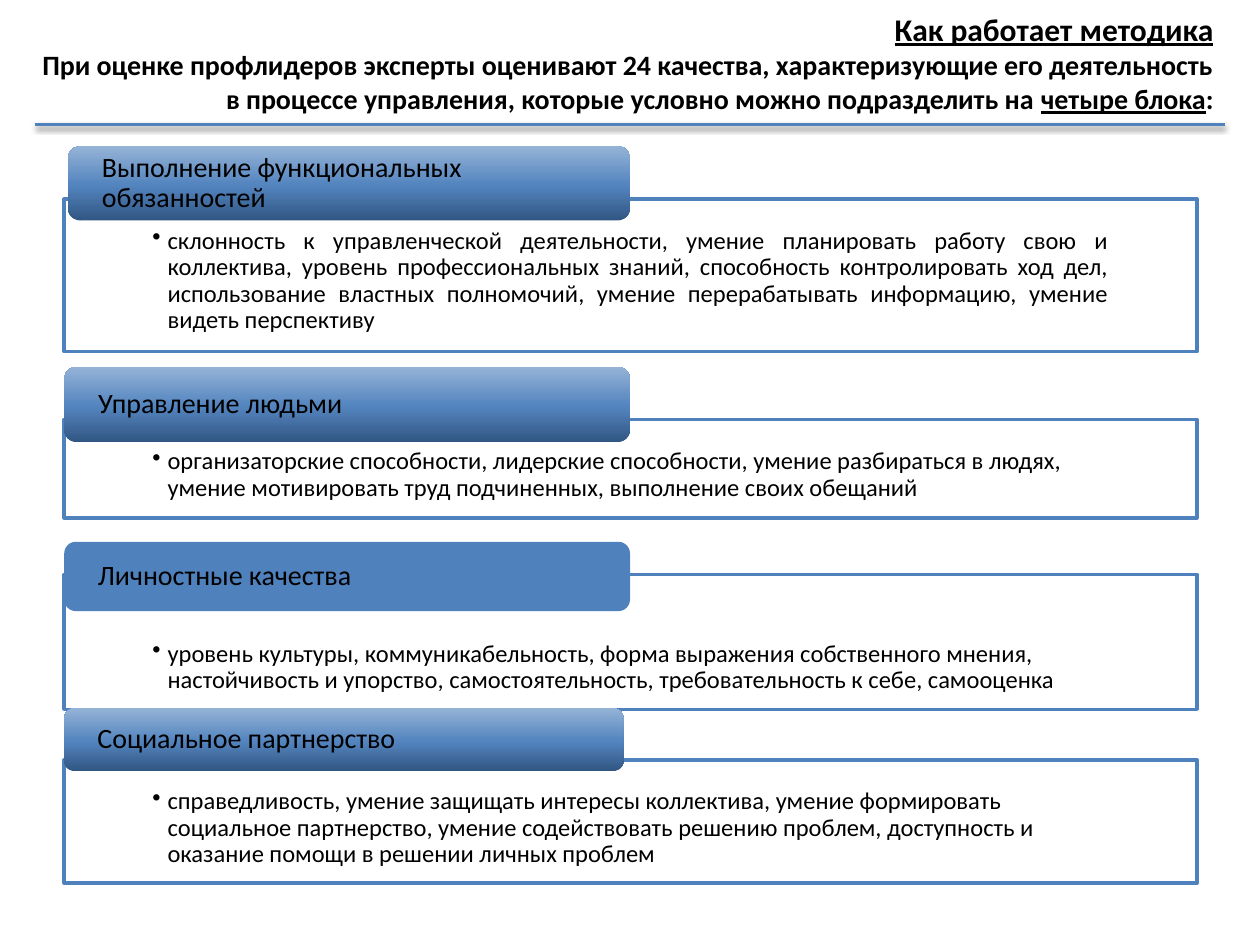
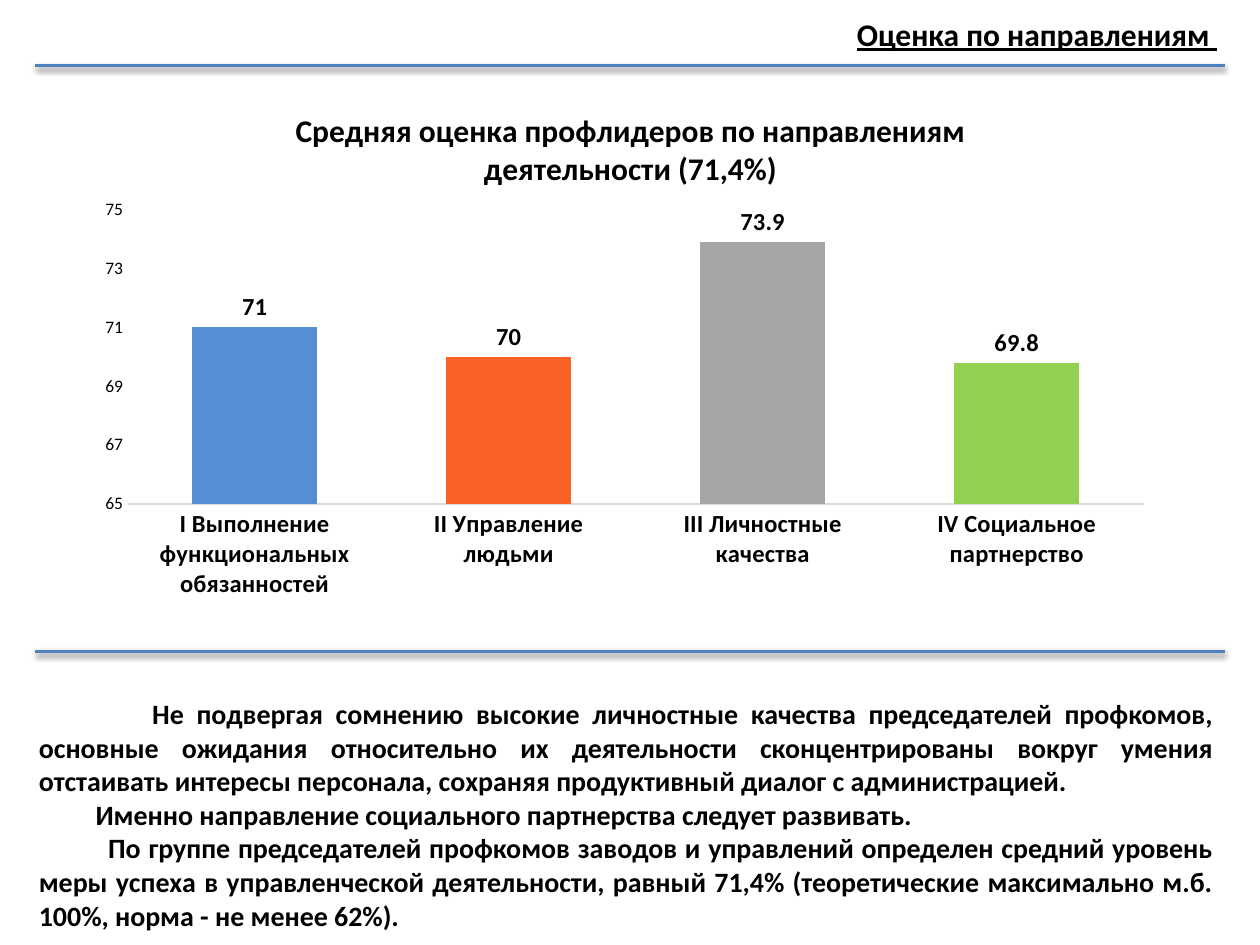
from typing import NamedTuple, Sequence

from lxml import etree
from pptx import Presentation
from pptx.chart import data as chart_data
from pptx.dml.color import RGBColor
from pptx.enum import chart as charts, shapes, text
from pptx.oxml import ns, parse_xml
from pptx.util import Inches, Pt

BLACK = RGBColor(0x00, 0x00, 0x00)
WHITE = RGBColor(0xFF, 0xFF, 0xFF)
BLUE = RGBColor(0x4F, 0x81, 0xBD)
AXIS_GREY = RGBColor(0xD9, 0xD9, 0xD9)
TAB_STOPS = (
    (0, RGBColor(0x31, 0x56, 0x83)),
    (48, RGBColor(0x54, 0x85, 0xBF)),
    (100, RGBColor(0x95, 0xB3, 0xD7)),
)
FONT = "Calibri"
LEFT, CENTER = text.PP_ALIGN.LEFT, text.PP_ALIGN.CENTER
RIGHT, JUSTIFY = text.PP_ALIGN.RIGHT, text.PP_ALIGN.JUSTIFY
BOX_LEFT, BOX_WIDTH = 0.51, 8.99


class Span(NamedTuple):
    words: str
    underline: bool = False


class Box(NamedTuple):
    left: float
    top: float
    width: float
    height: float

    def lengths(self) -> tuple:
        return tuple(Inches(side) for side in self)


class Block(NamedTuple):
    heading: str
    qualities: str
    tab: Box
    top: float
    height: float
    align: text.PP_ALIGN = LEFT
    inset_top: float = 0.23
    shaded: bool = True


class Direction(NamedTuple):
    name: str
    score: float
    color: RGBColor


class Remark(NamedTuple):
    words: str
    indent: float


BLOCKS = (
    Block(
        "Выполнение функциональных обязанностей",
        "склонность к управленческой деятельности, умение планировать работу свою и "
        "коллектива, уровень профессиональных знаний, способность контролировать ход дел, "
        "использование властных полномочий, умение перерабатывать информацию, умение "
        "видеть перспективу",
        Box(0.54, 1.16, 4.46, 0.59), 1.58, 1.21, align=JUSTIFY,
    ),
    Block(
        "Управление людьми",
        "организаторские способности, лидерские способности, умение разбираться в людях, "
        "умение мотивировать труд подчиненных, выполнение своих обещаний",
        Box(BOX_LEFT, 2.91, 4.49, 0.6), 3.33, 0.78,
    ),
    Block(
        "Личностные качества",
        "уровень культуры, коммуникабельность, форма выражения собственного мнения, "
        "настойчивость и упорство, самостоятельность, требовательность к себе, самооценка",
        Box(BOX_LEFT, 4.3, 4.49, 0.55), 4.56, 1.07, inset_top=0.53, shaded=False,
    ),
    Block(
        "Социальное партнерство",
        "справедливость, умение защищать интересы коллектива, умение формировать "
        "социальное партнерство, умение содействовать решению проблем, доступность и "
        "оказание помощи в решении личных проблем",
        Box(BOX_LEFT, 5.62, 4.44, 0.5), 6.03, 0.98,
    ),
)

DIRECTIONS = (
    Direction("I Выполнение функциональных обязанностей", 71, RGBColor(0x55, 0x8E, 0xD5)),
    Direction("II Управление людьми", 70, RGBColor(0xF8, 0x62, 0x26)),
    Direction("III Личностные качества", 73.9, RGBColor(0xA6, 0xA6, 0xA6)),
    Direction("IV Социальное партнерство", 69.8, RGBColor(0x92, 0xD0, 0x50)),
)

REMARKS = (
    Remark(
        "Не подвергая сомнению высокие личностные качества председателей профкомов, "
        "основные ожидания относительно их деятельности сконцентрированы вокруг умения "
        "отстаивать интересы персонала, сохраняя продуктивный диалог с администрацией.",
        0.9,
    ),
    Remark("Именно направление социального партнерства следует развивать.", 0.45),
    Remark(
        "По группе председателей профкомов заводов и управлений определен средний уровень "
        "меры успеха в управленческой деятельности, равный 71,4% (теоретические максимально "
        "м.б. 100%, норма - не менее 62%).",
        0.55,
    ),
)


def style_font(font, size: float, bold: bool = False) -> None:
    font.name, font.size, font.bold = FONT, Pt(size), bold
    font.color.rgb = BLACK


def write(frame, spans: Sequence[Span], *, size: float, bold: bool = False,
          align: text.PP_ALIGN = LEFT, spacing: float = 1.0, indent: float = 0,
          bullet: bool = False, first: bool = True) -> None:
    paragraph = frame.paragraphs[0] if first else frame.add_paragraph()
    paragraph.alignment, paragraph.line_spacing = align, spacing
    properties = paragraph._p.get_or_add_pPr()
    properties.set("indent", str(Inches(indent)))
    if bullet:
        properties.set("marL", str(Inches(-indent)))
        etree.SubElement(properties, ns.qn("a:buChar")).set("char", "•")
    for span in spans:
        run = paragraph.add_run()
        run.text = span.words
        style_font(run.font, size, bold)
        run.font.underline = span.underline


def set_frame(frame, left: float, top: float, right: float, bottom: float,
              anchor: text.MSO_ANCHOR = text.MSO_ANCHOR.TOP) -> None:
    frame.word_wrap = True
    frame.vertical_anchor = anchor
    frame.margin_left, frame.margin_top = Inches(left), Inches(top)
    frame.margin_right, frame.margin_bottom = Inches(right), Inches(bottom)


def add_text_box(slide, box: Box):
    frame = slide.shapes.add_textbox(*box.lengths()).text_frame
    set_frame(frame, 0.1, 0.05, 0.1, 0.05)
    return frame


def add_panel(slide, kind: shapes.MSO_SHAPE, box: Box, fill: RGBColor):
    panel = slide.shapes.add_shape(kind, *box.lengths())
    panel.shadow.inherit = False
    panel.fill.solid()
    panel.fill.fore_color.rgb = fill
    panel.line.fill.background()
    return panel


def shade(panel) -> None:
    stops = "".join(
        f'<a:gs pos="{position * 1000}"><a:srgbClr val="{color}"/></a:gs>'
        for position, color in TAB_STOPS
    )
    gradient = parse_xml(
        f'<a:gradFill {ns.nsdecls("a")} rotWithShape="1"><a:gsLst>{stops}</a:gsLst>'
        '<a:lin ang="16200000" scaled="0"/></a:gradFill>'
    )
    properties = panel._element.spPr
    properties.replace(properties.find(ns.qn("a:solidFill")), gradient)


def add_rule(slide, y: float) -> None:
    rule = slide.shapes.add_connector(
        shapes.MSO_CONNECTOR.STRAIGHT, Inches(0.28), Inches(y), Inches(9.72), Inches(y))
    rule.line.color.rgb = BLUE
    rule.line.width = Pt(2)
    rule._element.spPr.append(parse_xml(
        f'<a:effectLst {ns.nsdecls("a")}><a:outerShdw blurRad="{Pt(3.1)}" dist="{Pt(1.6)}" '
        'dir="5400000" rotWithShape="0"><a:srgbClr val="000000"><a:alpha val="38000"/>'
        '</a:srgbClr></a:outerShdw></a:effectLst>'
    ))


def add_block(slide, block: Block) -> None:
    box = Box(BOX_LEFT, block.top, BOX_WIDTH, block.height)
    body = add_panel(slide, shapes.MSO_SHAPE.RECTANGLE, box, WHITE)
    body.line.color.rgb = BLUE
    body.line.width = Pt(2)
    set_frame(body.text_frame, 0.7, block.inset_top, 0.7, 0.11)
    write(body.text_frame, [Span(block.qualities)], size=14, align=block.align,
          spacing=0.9, indent=-0.12, bullet=True)

    tab = add_panel(slide, shapes.MSO_SHAPE.ROUNDED_RECTANGLE, block.tab, BLUE)
    if block.shaded:
        shade(tab)
    set_frame(tab.text_frame, 0.24, 0, 0.24, 0, text.MSO_ANCHOR.MIDDLE)
    write(tab.text_frame, [Span(block.heading)], size=16, spacing=0.9)


def place(parent, x: float, y: float, size: tuple = ()) -> None:
    old = parent.find(ns.qn("c:layout"))
    if old is not None:
        parent.remove(old)
    target = '<c:layoutTarget val="inner"/>' if size else ""
    extent = "".join(f'<c:{name} val="{value}"/>' for name, value in zip("wh", size))
    layout = parse_xml(
        f'<c:layout {ns.nsdecls("c")}><c:manualLayout>{target}<c:xMode val="edge"/>'
        f'<c:yMode val="edge"/><c:x val="{x}"/><c:y val="{y}"/>{extent}'
        '</c:manualLayout></c:layout>'
    )
    heading = parent.find(ns.qn("c:tx"))
    if heading is None:
        parent.insert(0, layout)
    else:
        heading.addnext(layout)


def add_score_chart(slide) -> None:
    scores = chart_data.CategoryChartData()
    scores.categories = [direction.name for direction in DIRECTIONS]
    scores.add_series("Series 1", [direction.score for direction in DIRECTIONS])
    chart = slide.shapes.add_chart(
        charts.XL_CHART_TYPE.COLUMN_CLUSTERED, *Box(0.67, 0.6, 8.58, 4.25).lengths(),
        scores).chart
    style_font(chart.font, 10)
    chart.has_legend = False
    chart.has_title = True
    write(chart.chart_title.text_frame,
          [Span("Средняя оценка профлидеров по направлениям деятельности (71,4%)")],
          size=18, bold=True, align=CENTER)
    place(chart.chart_title._element, 0.19, 0.05)
    place(chart._chartSpace.chart.plotArea, 0.04, 0.25, (0.94, 0.55))

    names, values = chart.category_axis, chart.value_axis
    for axis, size, bold in ((names, 14, True), (values, 10, False)):
        style_font(axis.tick_labels.font, size, bold)
        axis.major_tick_mark = axis.minor_tick_mark = charts.XL_TICK_MARK.NONE
        axis.has_major_gridlines = False
    names.format.line.color.rgb = AXIS_GREY
    names.format.line.width = Pt(0.75)
    values.format.line.fill.background()
    values.minimum_scale, values.maximum_scale, values.major_unit = 65, 75, 2

    plot = chart.plots[0]
    plot.gap_width, plot.overlap, plot.vary_by_categories = 103, -27, False
    plot.has_data_labels = True
    plot.data_labels.show_value = True
    plot.data_labels.position = charts.XL_LABEL_POSITION.OUTSIDE_END
    style_font(plot.data_labels.font, 14, True)
    for index, direction in enumerate(DIRECTIONS):
        fill = plot.series[0].points[index].format.fill
        fill.solid()
        fill.fore_color.rgb = direction.color


def build_method_slide(slide) -> None:
    for block in BLOCKS:
        add_block(slide, block)
    title = add_text_box(slide, Box(0.12, 0.03, 9.61, 1.21))
    write(title, [Span("Как работает методика", True)], size=18, bold=True, align=RIGHT)
    write(title, [
        Span("При оценке профлидеров эксперты оценивают 24 качества, характеризующие его "
             "деятельность в процессе управления, которые условно можно подразделить на "),
        Span("четыре блока", True),
        Span(":"),
    ], size=16, bold=True, align=RIGHT, first=False)
    add_rule(slide, 0.99)


def build_scores_slide(slide) -> None:
    add_score_chart(slide)
    for y in (0.52, 5.17):
        add_rule(slide, y)
    conclusions = add_text_box(slide, Box(0.21, 5.48, 9.52, 2.02))
    for number, remark in enumerate(REMARKS):
        write(conclusions, [Span(remark.words)], size=16, bold=True, align=JUSTIFY,
              indent=remark.indent, first=number == 0)
    title = add_text_box(slide, Box(6.46, 0.07, 3.54, 0.71))
    write(title, [Span("Оценка по направлениям ", True)], size=18, bold=True, align=CENTER)


def main() -> None:
    deck = Presentation()
    deck.slide_width, deck.slide_height = Inches(10), Inches(7.5)
    for build in (build_method_slide, build_scores_slide):
        build(deck.slides.add_slide(deck.slide_layouts[6]))
    deck.save("out.pptx")


if __name__ == "__main__":
    main()
